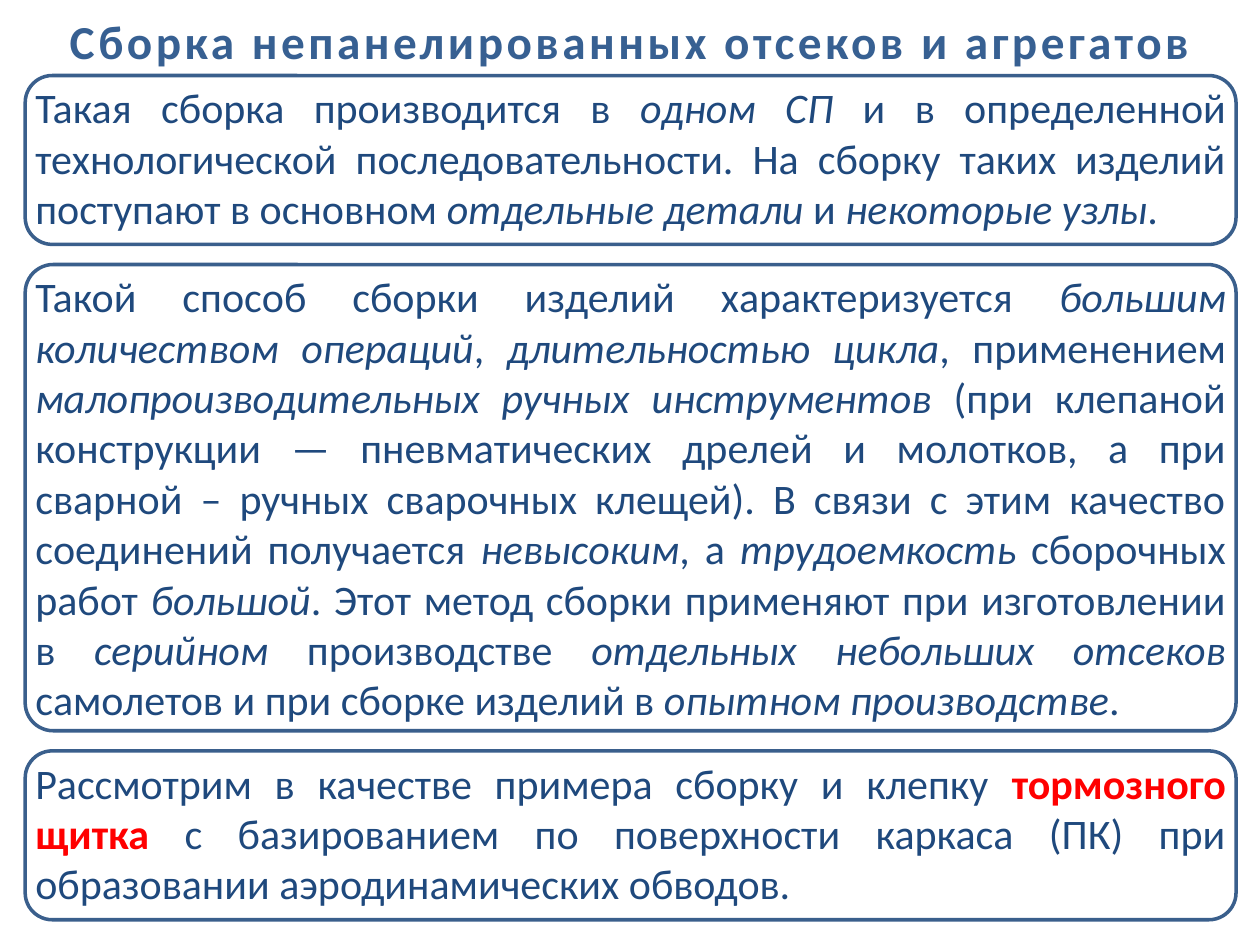
from pptx import Presentation
from pptx.dml.color import RGBColor
from pptx.enum.shapes import MSO_SHAPE as Shape
from pptx.enum.text import MSO_AUTO_SIZE as AutoSize, PP_ALIGN as Align
from pptx.util import Inches, Pt

TITLE_COLOR = RGBColor(0x37, 0x60, 0x92)
TEXT_COLOR = RGBColor(0x1F, 0x49, 0x7D)
FRAME_COLOR = RGBColor(0x3A, 0x5F, 0x8C)
ACCENT_COLOR = RGBColor(0xFF, 0x00, 0x00)

TITLE = "Сборка непанелированных отсеков и агрегатов"
PLAIN, ITALIC, ACCENT = "plain", "italic", "accent"

CONDITIONS = [
    ("Такая сборка производится в ", PLAIN),
    ("одном СП ", ITALIC),
    ("и в определенной технологической последовательности. "
     "На сборку таких изделий поступают в основном ", PLAIN),
    ("отдельные детали ", ITALIC),
    ("и ", PLAIN),
    ("некоторые узлы", ITALIC),
    (".", PLAIN),
]
FEATURES = [
    ("Такой способ сборки изделий характеризуется ", PLAIN),
    ("большим количеством операций", ITALIC),
    (", ", PLAIN),
    ("длительностью цикла", ITALIC),
    (", применением ", PLAIN),
    ("малопроизводительных ручных инструментов ", ITALIC),
    ("(при клепаной конструкции — пневматических дрелей и молотков, "
     "а при сварной – ручных сварочных клещей). "
     "В связи с этим качество соединений получается ", PLAIN),
    ("невысоким", ITALIC),
    (", а ", PLAIN),
    ("трудоемкость", ITALIC),
    (" сборочных работ ", PLAIN),
    ("большой", ITALIC),
    (". Этот метод сборки применяют при изготовлении в ", PLAIN),
    ("серийном", ITALIC),
    (" производстве ", PLAIN),
    ("отдельных небольших отсеков", ITALIC),
    (" самолетов и при сборке изделий в ", PLAIN),
    ("опытном производстве", ITALIC),
    (".", PLAIN),
]
EXAMPLE = [
    ("Рассмотрим в качестве примера сборку и клепку ", PLAIN),
    ("тормозного щитка", ACCENT),
    (" с базированием по поверхности каркаса (ПК) "
     "при образовании аэродинамических обводов.", PLAIN),
]

WIDTH, HEIGHT = Inches(10), Inches(7.5)
MARGIN = Inches(0.2)
PANEL_WIDTH = Inches(9.61)
GAP = Inches(0.16)
FIRST_TOP = Inches(0.6)
PANELS = [
    (CONDITIONS, Inches(1.31), Inches(1.34), 0.16),
    (FEATURES, Inches(3.74), Inches(3.7), 0.06),
    (EXAMPLE, Inches(1.31), Inches(1.34), 0.16),
]


def add_text(slide, left, top, width, height, pieces, size, color, align):
    frame = slide.shapes.add_textbox(left, top, width, height).text_frame
    frame.word_wrap = True
    paragraph = frame.paragraphs[0]
    paragraph.alignment = align
    paragraph.font.name = "Calibri"
    paragraph.font.size = Pt(size)
    paragraph.font.color.rgb = color
    for text, style in pieces:
        run = paragraph.add_run()
        run.text = text
        if style == ITALIC:
            run.font.italic = True
        elif style == ACCENT:
            run.font.bold = True
            run.font.color.rgb = ACCENT_COLOR
    return frame


def add_title(slide):
    frame = add_text(slide, 0, Inches(0.05), WIDTH, Inches(0.55),
                     [(TITLE, PLAIN)], 27, TITLE_COLOR, Align.CENTER)
    paragraph = frame.paragraphs[0]
    paragraph.font.bold = True
    paragraph.runs[0]._r.get_or_add_rPr().set("spc", "200")


def add_panel(slide, top, pieces, text_height, frame_height, rounding):
    frame = add_text(slide, MARGIN, top, PANEL_WIDTH, text_height,
                     pieces, 24, TEXT_COLOR, Align.JUSTIFY)
    frame.margin_left = frame.margin_right = Inches(0.08)
    frame.auto_size = AutoSize.SHAPE_TO_FIT_TEXT
    frame.paragraphs[0].space_after = Pt(3)

    border = slide.shapes.add_shape(Shape.ROUNDED_RECTANGLE, MARGIN, top,
                                    PANEL_WIDTH, frame_height)
    border.adjustments[0] = rounding
    border.shadow.inherit = False
    border.fill.background()
    border.line.color.rgb = FRAME_COLOR
    border.line.width = Pt(2)


def main():
    presentation = Presentation()
    presentation.slide_width, presentation.slide_height = WIDTH, HEIGHT
    slide = presentation.slides.add_slide(presentation.slide_layouts[6])
    add_title(slide)
    top = FIRST_TOP
    for pieces, text_height, frame_height, rounding in PANELS:
        add_panel(slide, top, pieces, text_height, frame_height, rounding)
        top += frame_height + GAP
    presentation.save("out.pptx")


if __name__ == "__main__":
    main()
